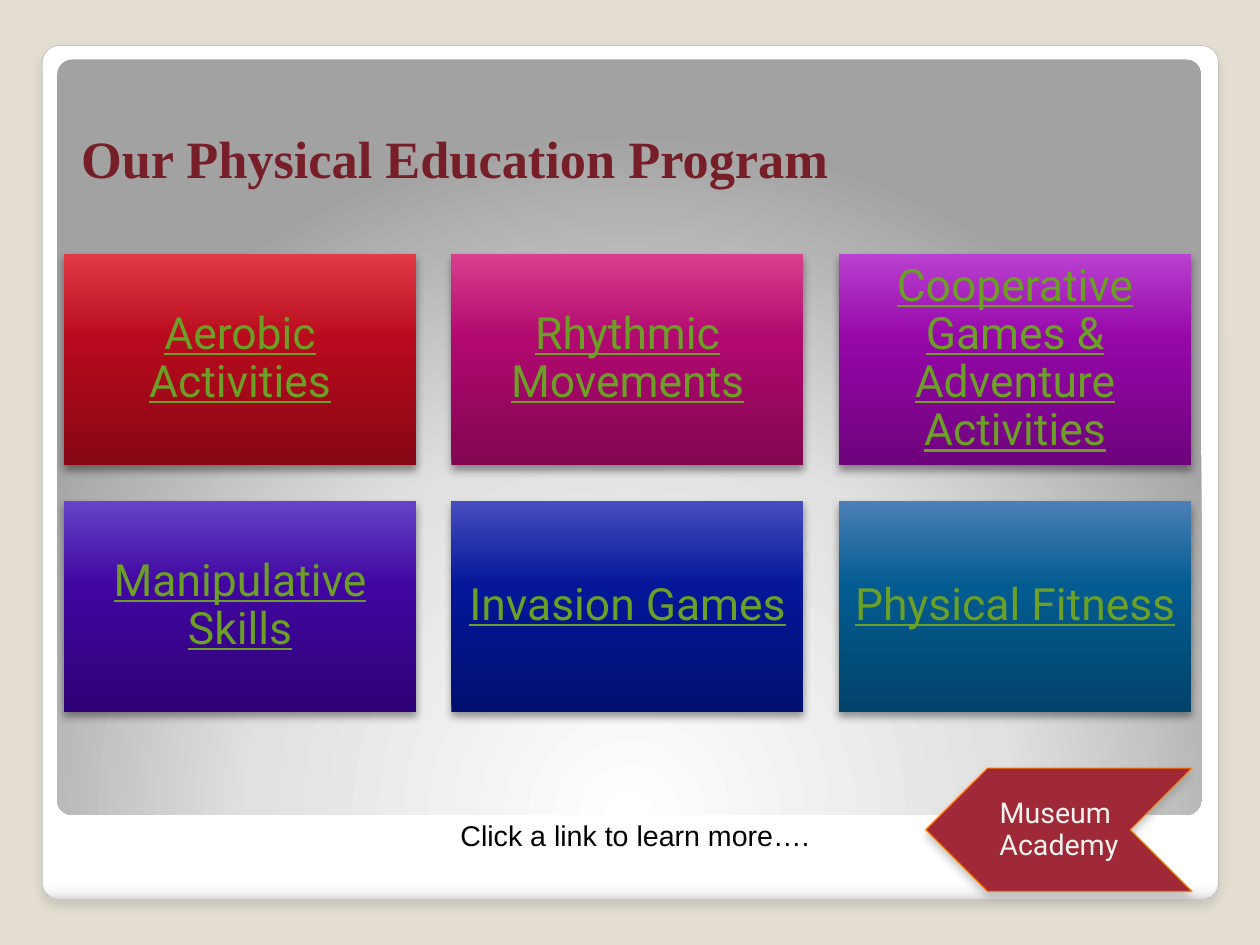
"""Build the physical education program slide with its six activity tiles."""
from pptx import Presentation
from pptx.dml.color import RGBColor
from pptx.enum.shapes import MSO_SHAPE
from pptx.enum.text import MSO_ANCHOR, PP_ALIGN
from pptx.oxml import parse_xml
from pptx.oxml.ns import nsdecls, qn
from pptx.util import Inches, Pt


def paint(shape, stops, direction, line=None, width=0, shadow=None):
    properties = shape._element.spPr
    colours = "".join(f'<a:gs pos="{position * 1000}"><a:srgbClr val="{colour}"/></a:gs>'
                      for position, colour in stops)
    if len(stops) == 1:
        shape.fill.solid()
        shape.fill.fore_color.rgb = RGBColor.from_string(stops[0][1])
    else:
        properties.append(parse_xml(f'<a:gradFill {nsdecls("a")} rotWithShape="1">'
                                    f'<a:gsLst>{colours}</a:gsLst>{direction}</a:gradFill>'))
    if line:
        shape.line.color.rgb = RGBColor.from_string(line)
        shape.line.width = Pt(width)
    else:
        shape.line.fill.background()
    shape.shadow.inherit = False
    if shadow:
        colour, opacity, blur, distance = shadow
        properties.find(qn("a:effectLst")).append(parse_xml(
            f'<a:outerShdw {nsdecls("a")} blurRad="{Pt(blur)}" dist="{Pt(distance)}" '
            f'dir="5400000" rotWithShape="0"><a:srgbClr val="{colour}">'
            f'<a:alpha val="{opacity * 1000}"/></a:srgbClr></a:outerShdw>'))


def write(shape, lines, font, size, colour, align=PP_ALIGN.LEFT, spacing=1.0,
          anchor=MSO_ANCHOR.MIDDLE, margins=(0.1, 0.05), wrap=True):
    frame = shape.text_frame
    frame.word_wrap = wrap
    frame.vertical_anchor = anchor
    frame.margin_left = frame.margin_right = Inches(margins[0])
    frame.margin_top = frame.margin_bottom = Inches(margins[1])
    frame.text = "\n".join(lines)
    for para in frame.paragraphs:
        para.alignment = align
        para.line_spacing = spacing
        para.font.name = font
        para.font.size = Pt(size)
        para.font.color.rgb = RGBColor.from_string(colour)
    return frame.paragraphs[0].font


deck = Presentation()
deck.slide_width, deck.slide_height = Inches(28 / 2.54), Inches(21 / 2.54)
page = deck.slides.add_slide(deck.slide_layouts[6])
page.background.fill.solid()
page.background.fill.fore_color.rgb = RGBColor.from_string("E3DED1")

DOWN = '<a:lin ang="5400000" scaled="0"/>'
UP = '<a:lin ang="16200000" scaled="0"/>'
GLOW = '<a:path path="circle"><a:fillToRect l="50000" t="175000" r="50000" b="-75000"/></a:path>'

card = page.shapes.add_shape(MSO_SHAPE.ROUNDED_RECTANGLE,
                             Inches(0.37), Inches(0.4), Inches(10.29), Inches(7.47))
card.adjustments[0] = 0.02
paint(card, [(0, "FFFFFF"), (98, "FFFFFF"), (99, "F7F7F7"), (100, "DADADA")], DOWN,
      "A4A3A3", 0.16, ("808080", 25, 6, 4))

panel = page.shapes.add_shape(MSO_SHAPE.ROUNDED_RECTANGLE,
                              Inches(0.5), Inches(0.52), Inches(10.01), Inches(6.61))
panel.adjustments[0] = 0.02
paint(panel, [(0, "FFFFFF"), (55, "E1E1E1"), (100, "A2A2A2")], GLOW)

title = page.shapes.add_textbox(Inches(0.6), Inches(0.63), Inches(9.87), Inches(1.08))
write(title, ["Our Physical Education Program"], "Times New Roman", 33, "771F28",
      anchor=MSO_ANCHOR.BOTTOM, margins=(0.11, 0.06)).bold = True

activities = [
    ("Aerobic Activities", "870614", "B80B1E", "E13C45"),
    ("Rhythmic Movements", "820551", "B10970", "D93F8C"),
    ("Cooperative Games & Adventure Activities", "6E037C", "9607A9", "B941D0"),
    ("Manipulative Skills", "2E0276", "4106A1", "6444C8"),
    ("Invasion Games", "010F70", "041799", "474EBF"),
    ("Physical Fitness", "00436A", "035C91", "4A80B7"),
]
for index, (activity, dark, middle, light) in enumerate(activities):
    row, column = divmod(index, 3)
    tile = page.shapes.add_shape(MSO_SHAPE.RECTANGLE,
                                 Inches(0.56 + 3.39 * column), Inches(2.22 + 2.16 * row),
                                 Inches(3.08), Inches(1.85))
    paint(tile, [(0, dark), (60, middle), (100, light)], UP, shadow=("000000", 40, 5.2, 3))
    write(tile, [activity], "Roboto", 28, "6B9F25", PP_ALIGN.CENTER, 0.9,
          margins=(0.12, 0.12)).underline = True

chevron = page.shapes.add_shape(MSO_SHAPE.CHEVRON,
                                Inches(8.1), Inches(6.72), Inches(2.33), Inches(1.08))
chevron._element.spPr.find(qn("a:xfrm")).set("flipH", "1")
paint(chevron, [(0, "9F2936")], None, "FF8000", 0.75, ("808080", 40, 5.2, 3))
write(chevron, ["Museum ", "Academy"], "Roboto", 18, "F2F2F2", PP_ALIGN.CENTER, 0.93)

prompt = page.shapes.add_textbox(Inches(3.93), Inches(7.13), Inches(3.29), Inches(0.39))
write(prompt, ["Click a link to learn more…."], "Arial", 18, "000000", spacing=0.93,
      anchor=MSO_ANCHOR.TOP, wrap=False)

deck.save("out.pptx")
